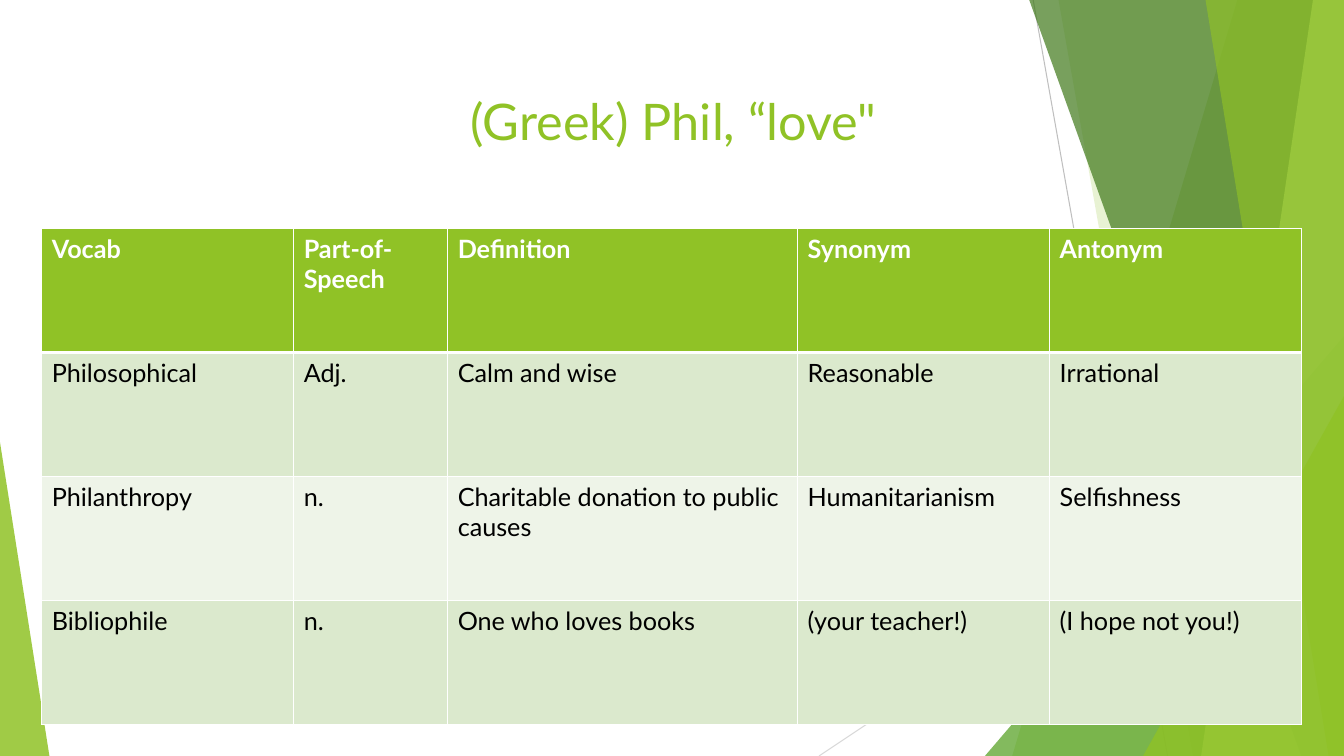
import pptx
import pptx.dml.color
import pptx.enum.shapes
import pptx.enum.text
import pptx.oxml
import pptx.oxml.ns
import pptx.util
import lxml.etree

Pt = pptx.util.Pt
qn = pptx.oxml.ns.qn
W, H = 960, 540
COLORS = {
    "lime": "90C226", "green": "54A021", "forest": "3F7819", "pale": "C0E474",
    "grey": "BFBFBF", "silver": "D9D9D9", "white": "FFFFFF", "black": "000000",
    "band": "DBE9CD", "light": "EEF4E8",
}
ROWS = [
    ["Vocab", "Part-of-\nSpeech", "Definition", "Synonym", "Antonym"],
    ["Philosophical", "Adj.", "Calm and wise", "Reasonable", "Irrational"],
    ["Philanthropy", "n.", "Charitable donation to public causes",
     "Humanitarianism", "Selfishness"],
    ["Bibliophile", "n.", "One who loves books", "(your teacher!)", "(I hope not you!)"],
]


def rgb(name):
    return pptx.dml.color.RGBColor.from_string(COLORS[name])


class Deck:
    """Holds the text style and the current slide."""

    def __init__(self, prs, font):
        self.font = font
        self.s = prs.slides.add_slide(prs.slide_layouts[5])

    def format(self, tf, color, **values):
        for p in tf.paragraphs:
            p.alignment = pptx.enum.text.PP_ALIGN.LEFT
            for r in p.runs:
                for name, value in {"name": self.font, **values}.items():
                    setattr(r.font, name, value)
                r.font.color.rgb = rgb(color)

    def paint(self, sp, color, opacity):
        sp.shadow.inherit = False
        sp.line.fill.background()
        sp.fill.solid()
        sp.fill.fore_color.rgb = rgb(color)
        clr = sp.fill._xPr.find(".//" + qn("a:srgbClr"))
        lxml.etree.SubElement(clr, qn("a:alpha"), val=str(opacity * 1000))

    def line(self, x1, y1, x2, y2, color):
        cx = self.s.shapes.add_connector(
            pptx.enum.shapes.MSO_CONNECTOR.STRAIGHT, Pt(x1), Pt(y1), Pt(x2), Pt(y2))
        cx.line.color.rgb = rgb(color)
        cx.line.width = Pt(0.75)
        lxml.etree.SubElement(cx._element.spPr, qn("a:effectLst"))

    def shard(self, top, bottom, color, opacity):
        """Band from a slanted left edge to the right side of the slide."""
        fb = self.s.shapes.build_freeform(Pt(top), Pt(-0.6))
        fb.add_line_segments([(Pt(x), Pt(y)) for x, y in
                              [(W, -0.6), (W, H), (bottom, H)]], close=True)
        self.paint(fb.convert_to_shape(), color, opacity)

    def triangle(self, x, y, w, apex, color, opacity):
        sp = self.s.shapes.add_shape(
            pptx.enum.shapes.MSO_SHAPE.ISOSCELES_TRIANGLE, Pt(x), Pt(y), Pt(w), Pt(H - y))
        sp.adjustments[0] = apex
        self.paint(sp, color, opacity)

    def title(self, text, x, y, w, h):
        sp = self.s.shapes.title
        for name, value in {"left": x, "top": y, "width": w, "height": h}.items():
            setattr(sp, name, Pt(value))
        tf = sp.text_frame
        tf.text = text
        for name, value in {"margin_left": Pt(14), "word_wrap": True,
                            "auto_size": pptx.enum.text.MSO_AUTO_SIZE.NONE,
                            "vertical_anchor": pptx.enum.text.MSO_ANCHOR.TOP}.items():
            setattr(tf, name, value)
        self.format(tf, "lime", size=Pt(36))

    def border(self, cell, side, width):
        cell._tc.get_or_add_tcPr().append(pptx.oxml.parse_xml(
            f'<a:{side} xmlns:a="http://schemas.openxmlformats.org/drawingml/2006/main" '
            f'w="{Pt(width)}"><a:solidFill><a:srgbClr val="{COLORS["white"]}"/>'
            f'</a:solidFill></a:{side}>'))

    def table(self, rows, x, y, widths, row_height):
        table = self.s.shapes.add_table(
            len(rows), len(widths), Pt(x), Pt(y),
            Pt(sum(widths)), Pt(row_height * len(rows))).table
        for col, width in zip(table.columns, widths):
            col.width = Pt(width)
        for i, texts in enumerate(rows):
            table.rows[i].height = Pt(row_height)
            fill = "lime" if i == 0 else ("light", "band")[i % 2]
            for j, text in enumerate(texts):
                cell = table.cell(i, j)
                cell.text = text
                self.format(cell.text_frame, "black" if i else "white",
                            size=Pt(18), bold=i == 0)
                # Thick rule between header and body
                for side, width in {"lnL": 1, "lnR": 1, "lnT": 3 if i == 1 else 1,
                                    "lnB": 3 if i == 0 else 1}.items():
                    self.border(cell, side, width)
                cell.fill.solid()
                cell.fill.fore_color.rgb = rgb(fill)


def main():
    prs = pptx.Presentation()
    prs.slide_width, prs.slide_height = Pt(W), Pt(H)
    deck = Deck(prs, "Lato")

    # Faceted backdrop
    deck.line(738, 0, 834, H, "grey")
    deck.line(W, 290, 585, H, "silver")
    deck.shard(884, 723, "lime", 30)
    deck.shard(756, 852, "lime", 20)
    deck.triangle(703.5, 240, 256.5, 1, "green", 72)
    deck.shard(735, 929.5, "forest", 70)
    deck.shard(938, 858, "pale", 70)
    deck.shard(861, 949, "lime", 65)
    deck.triangle(816.5, 283, 143.5, 1, "lime", 80)
    deck.triangle(0, 316, 35.3, 0, "lime", 85)

    # Title and vocabulary table
    deck.title("(Greek) Phil, “love\"", 322, 60.5, 585, 116)
    deck.table(ROWS, 29.8, 163.3, [180, 110, 250, 180, 180], 88.6)

    prs.save("out.pptx")


if __name__ == "__main__":
    main()
